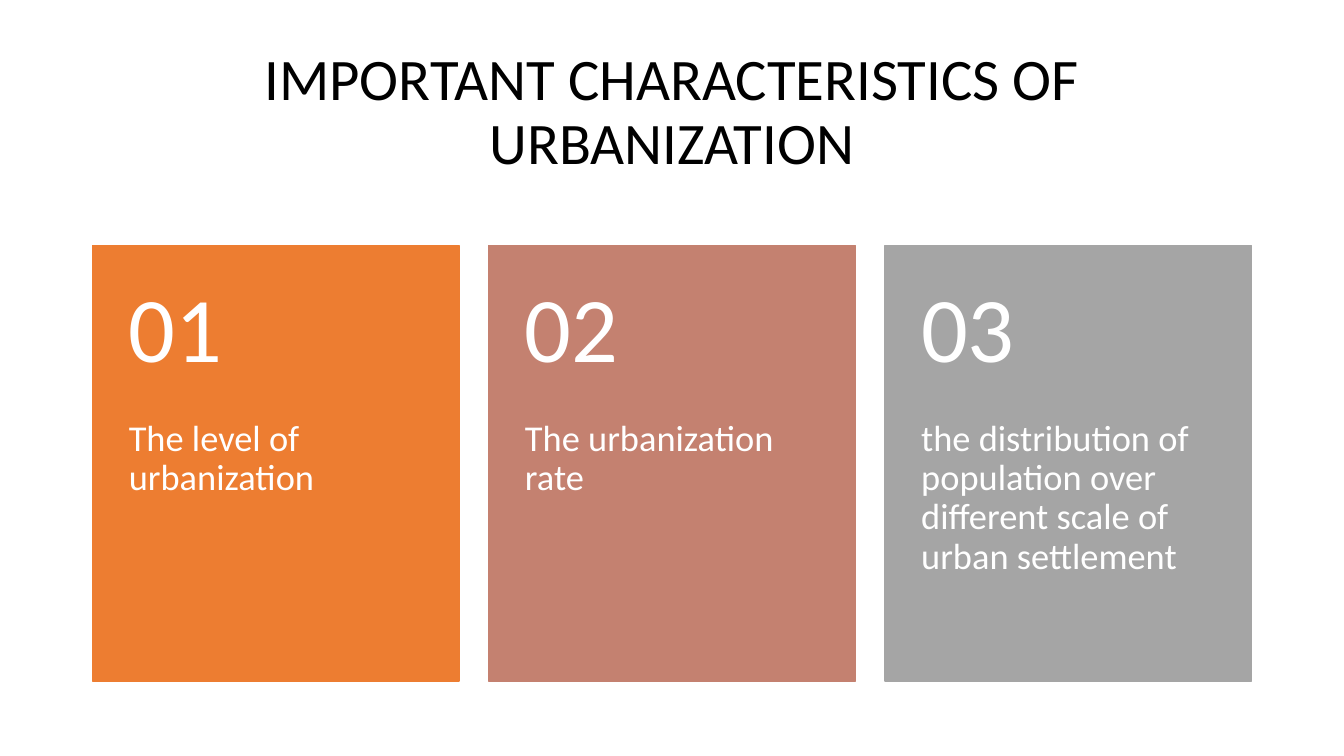
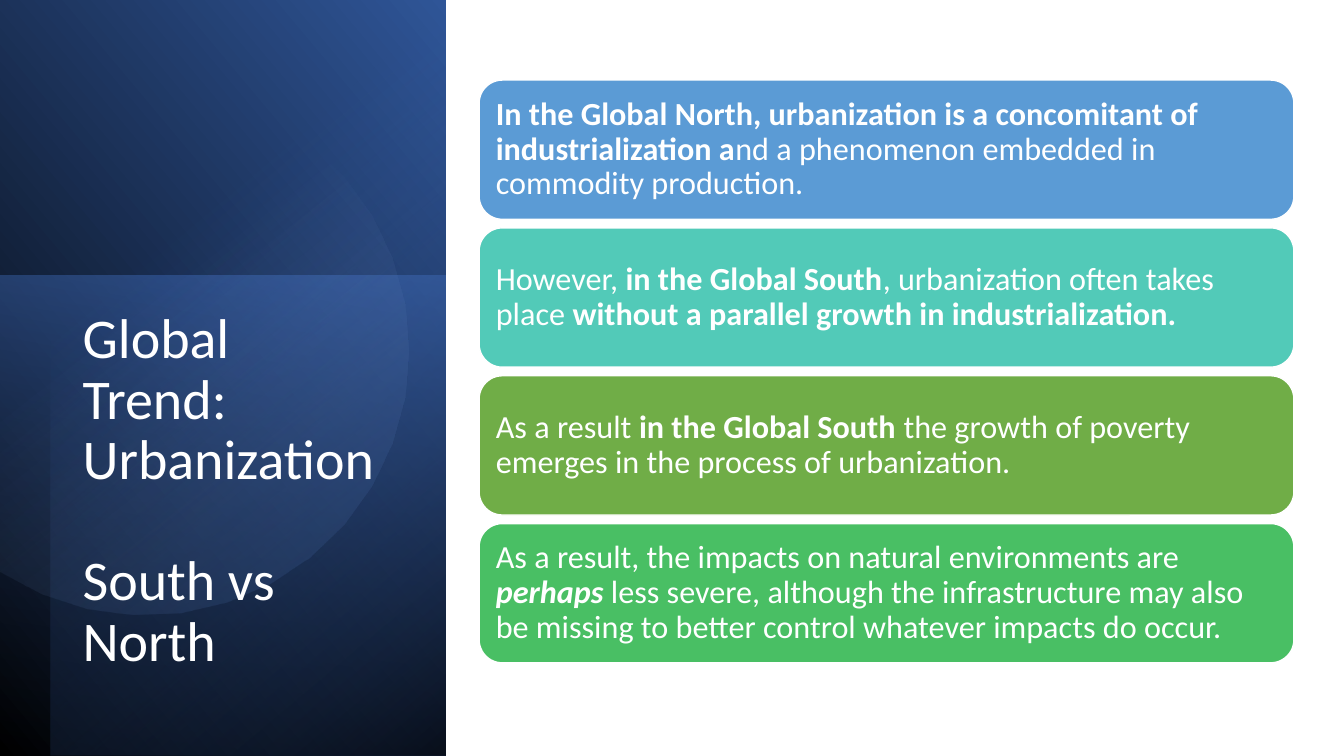
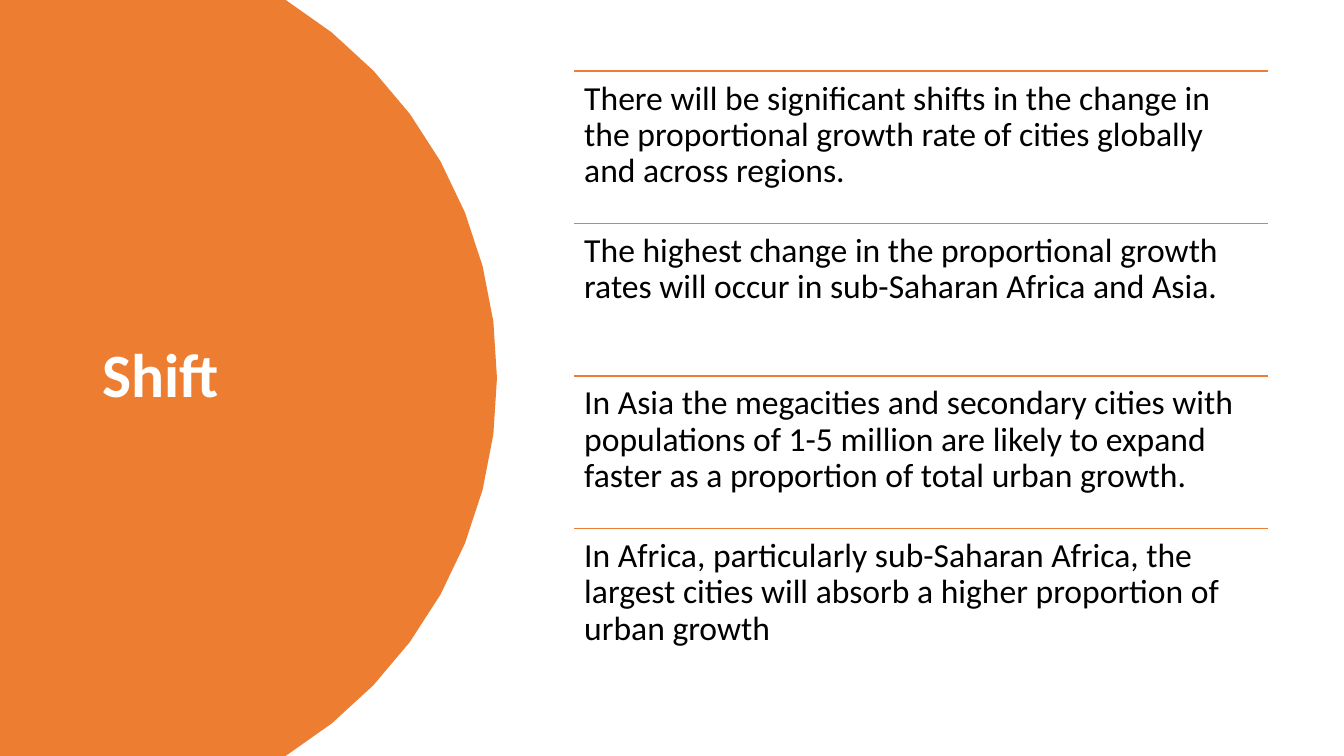
import math

import pptx
import pptx.dml.color
import pptx.enum.shapes
import pptx.enum.text
import pptx.oxml.ns
import pptx.util
from lxml import etree

Pt = pptx.util.Pt
Kind = pptx.enum.shapes.MSO_SHAPE
Align = pptx.enum.text.PP_ALIGN
Anchor = pptx.enum.text.MSO_ANCHOR
qn = pptx.oxml.ns.qn

WIDE, HIGH = 960, 540
WHITE, BLACK, ORANGE = "FFFFFF", "000000", "ED7D31"
BLUE, NAVY, DEEP, PALE = "4472C4", "2F5597", "203864", "8FAADC"


def tint(code):
    return pptx.dml.color.RGBColor.from_string(code)


def write(frame, *paras, size, color, bold=False, align=Align.LEFT,
          anchor=Anchor.TOP, inset=(7.2, 3.6, 7.2, 3.6), gap=0):
    """Fill a frame; a paragraph is a string or a list of (text, style) runs,
    where style holds b for bold and i for italic. The last of several
    paragraphs stands off by gap."""
    frame.word_wrap = True
    frame.vertical_anchor = anchor
    (frame.margin_left, frame.margin_top,
     frame.margin_right, frame.margin_bottom) = map(Pt, inset)
    for n, runs in enumerate(paras):
        para = frame.add_paragraph() if n else frame.paragraphs[0]
        para.alignment = align
        para.line_spacing = 0.9
        para.space_before = Pt(gap if n and n == len(paras) - 1 else 0)
        if isinstance(runs, str):
            runs = [(runs, "b" if bold else "")]
        for words, style in runs:
            run = para.add_run()
            run.text = words
            font = run.font
            font.name, font.size = Deck.font, Pt(size)
            font.color.rgb = tint(color)
            font.bold, font.italic = "b" in style, "i" in style


class Deck:
    font = "Calibri"

    def __init__(self):
        self.file = pptx.Presentation()
        self.file.slide_width, self.file.slide_height = Pt(WIDE), Pt(HIGH)

    def start(self):
        """Add a slide and make it current."""
        self.slide = self.file.slides.add_slide(self.file.slide_layouts[6])
        self.shapes = self.slide.shapes

    def paint(self, shape, fill, line=None, angle=0):
        """Fill with a colour, or a gradient of (position, colour, alpha)
        stops running clockwise from left to right by angle."""
        shape.shadow.inherit = False
        if isinstance(fill, str):
            shape.fill.solid()
            shape.fill.fore_color.rgb = tint(fill)
        else:
            shape.fill.gradient()
            shape.fill.gradient_angle = -angle % 360
            for stop, (pos, code, _) in zip(shape.fill.gradient_stops, fill):
                stop.position = pos
                stop.color.rgb = tint(code)
            codes = shape.element.spPr.iter(qn("a:srgbClr"))
            for code, (_, _, alpha) in zip(codes, fill):
                etree.SubElement(code, qn("a:alpha")).set(
                    "val", str(alpha * 1000))
        if line:
            shape.line.color.rgb = tint(line)
            shape.line.width = Pt(1)
        else:
            shape.line.fill.background()
        return shape

    def box(self, x, y, w, h, fill, kind=Kind.RECTANGLE, **look):
        shape = self.shapes.add_shape(kind, Pt(x), Pt(y), Pt(w), Pt(h))
        return self.paint(shape, fill, **look)

    def disc(self, x, y, r, half, fill, ends=(), steps=16, **look):
        """Draw the part of a circle within half degrees of its right side,
        closed through the points in ends."""
        dots = []
        for step in range(steps + 1):
            turn = math.radians(half * (2 * step / steps - 1))
            dots.append((x + r * math.cos(turn), y + r * math.sin(turn)))
        dots = [(Pt(a), Pt(b)) for a, b in (*dots, *ends)]
        form = self.shapes.build_freeform(*dots[0])
        form.add_line_segments(dots[1:], close=True)
        return self.paint(form.convert_to_shape(), fill, **look)

    def text(self, x, y, w, h, *paras, **look):
        label = self.shapes.add_textbox(Pt(x), Pt(y), Pt(w), Pt(h))
        write(label.text_frame, *paras, **look)

    def rule(self, x, y, w, color):
        line = self.shapes.add_connector(
            pptx.enum.shapes.MSO_CONNECTOR.STRAIGHT,
            Pt(x), Pt(y), Pt(x + w), Pt(y))
        line.line.color.rgb = tint(color)
        line.line.width = Pt(1)
        etree.SubElement(line.element.spPr, qn("a:effectLst"))


def traits(deck):
    deck.start()
    deck.text(66, 28.75, 828, 104.4,
              "IMPORTANT CHARACTERISTICS OF URBANIZATION",
              size=42, color=BLACK, align=Align.CENTER, anchor=Anchor.MIDDLE)
    cards = [
        (ORANGE, "The level of urbanization"),
        ("C48170", "The urbanization rate"),
        ("A5A5A5", "the distribution of population over different scale "
                   "of urban settlement"),
    ]
    top, wide, head, body = 175.5, 262, 124.5, 186.5
    for n, (fill, words) in enumerate(cards):
        x = 66 + n * 283
        deck.box(x, top, wide, head + body, fill, line=fill)
        deck.text(x, top + head, wide, body, words, size=26, color=WHITE,
                  inset=(26, 0, 26, 26))
        deck.text(x, top, wide, head, f"{n + 1:02}", size=66, color=WHITE,
                  anchor=Anchor.MIDDLE, inset=(26, 13, 26, 13))


def trend(deck):
    deck.start()
    wide = 318.5
    deck.box(0, 0, wide, HIGH, [(0, BLACK, 100), (1, NAVY, 100)], angle=320)
    deck.box(0, 197, wide, HIGH - 197,
             [(0, BLUE, 50), (1, DEEP, 0)], angle=100)
    deck.box(36, 0, wide - 36, HIGH,
             [(0, BLACK, 59), (0.69, BLUE, 0)], angle=230)
    deck.disc(103.5, 250.5, 188.5, 123.3, [(0.39, PALE, 0), (1, NAVY, 26)],
              steps=24, angle=52)
    deck.text(52, 218, 227, 242, "Global Trend:", "Urbanization",
              "South vs North", size=40, color=WHITE, gap=43.5)
    bars = [
        ("5B9BD5", [
            ("In the Global North, urbanization is a concomitant of "
             "industrialization a", "b"),
            ("nd a phenomenon embedded in commodity production.", "")]),
        ("52CAB8", [
            ("However, ", ""), ("in the Global South", "b"),
            (", urbanization often takes place ", ""),
            ("without a parallel growth in industrialization.", "b")]),
        ("70AD47", [
            ("As a result ", ""), ("in the Global South ", "b"),
            ("the growth of poverty emerges in the process of "
             "urbanization.", "")]),
        ("49BF64", [
            ("As a result, the impacts on natural environments are ", ""),
            ("perhaps", "bi"),
            (" less severe, although the infrastructure may also be missing "
             "to better control whatever impacts do occur.", "")]),
    ]
    for n, (fill, runs) in enumerate(bars):
        bar = deck.box(342.25, 57.2, 582, 99.5, fill,
                       kind=Kind.ROUNDED_RECTANGLE, line=WHITE)
        bar.top = Pt(57.2 + n * 105.6)
        write(bar.text_frame, runs, size=23, color=WHITE,
              anchor=Anchor.MIDDLE, inset=(7.2,) * 4)


def shift(deck):
    deck.start()
    deck.disc(38, 270, 317, 58.4, ORANGE, ends=[(0, HIGH), (0, 0)])
    deck.text(66, 50.4, 232.5, 438.5, "Shift", size=44, color=WHITE,
              bold=True, anchor=Anchor.MIDDLE)
    notes = [
        "There will be significant shifts in the change in the proportional "
        "growth rate of cities globally and across regions.",
        "The highest change in the proportional growth rates will occur in "
        "sub-Saharan Africa and Asia.",
        "In Asia the megacities and secondary cities with populations of 1-5 "
        "million are likely to expand faster as a proportion of total urban "
        "growth.",
        "In Africa, particularly sub-Saharan Africa, the largest cities will "
        "absorb a higher proportion of urban growth",
    ]
    x, wide, step = 410.25, 495.5, 108.9
    for n, words in enumerate(notes):
        y = 50.7 + n * step
        deck.rule(x, y, wide, ORANGE)
        deck.text(x, y, wide, step, words, size=24, color=BLACK,
                  inset=(7.2,) * 4)


def main():
    deck = Deck()
    traits(deck)
    trend(deck)
    shift(deck)
    deck.file.save("out.pptx")


if __name__ == "__main__":
    main()
